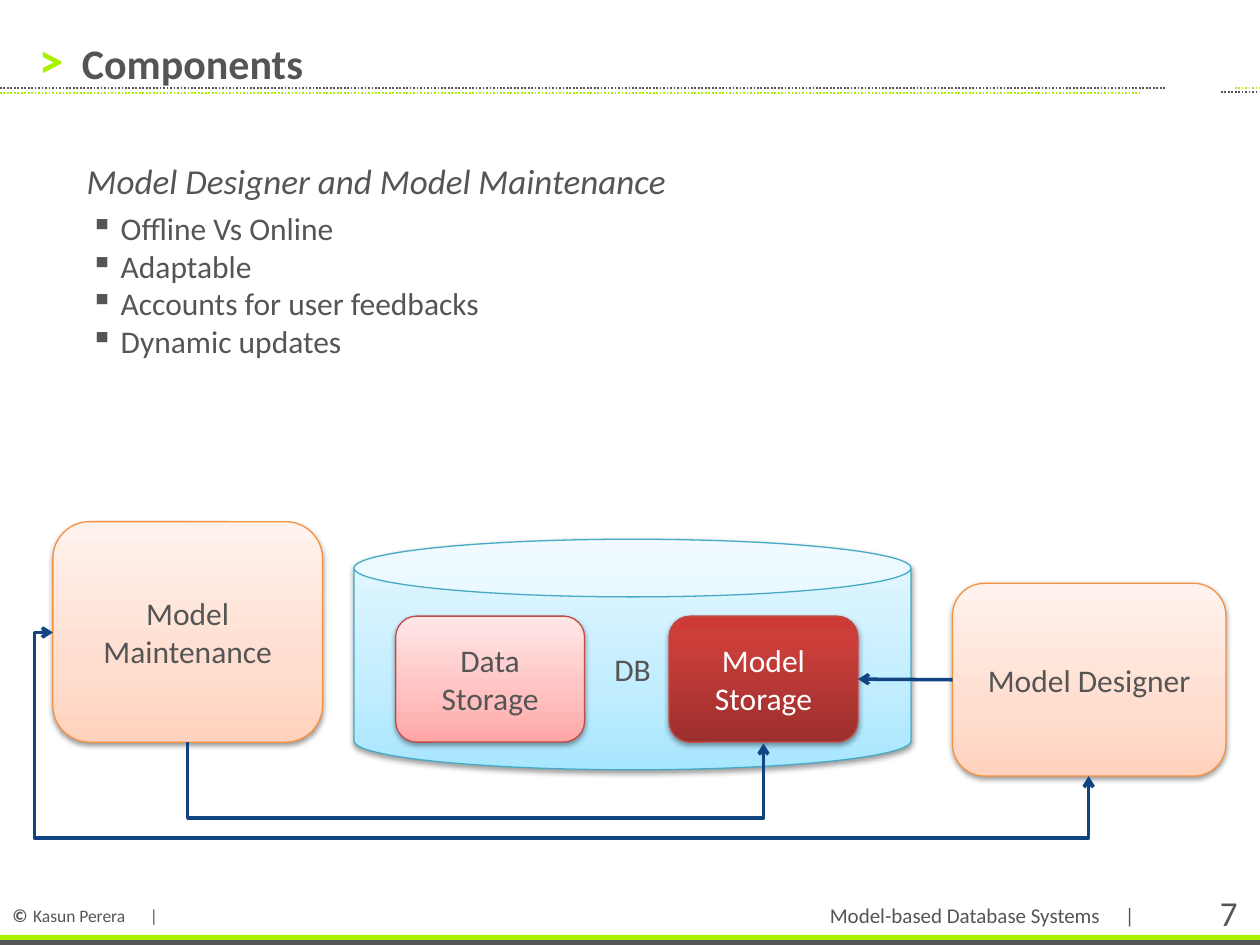
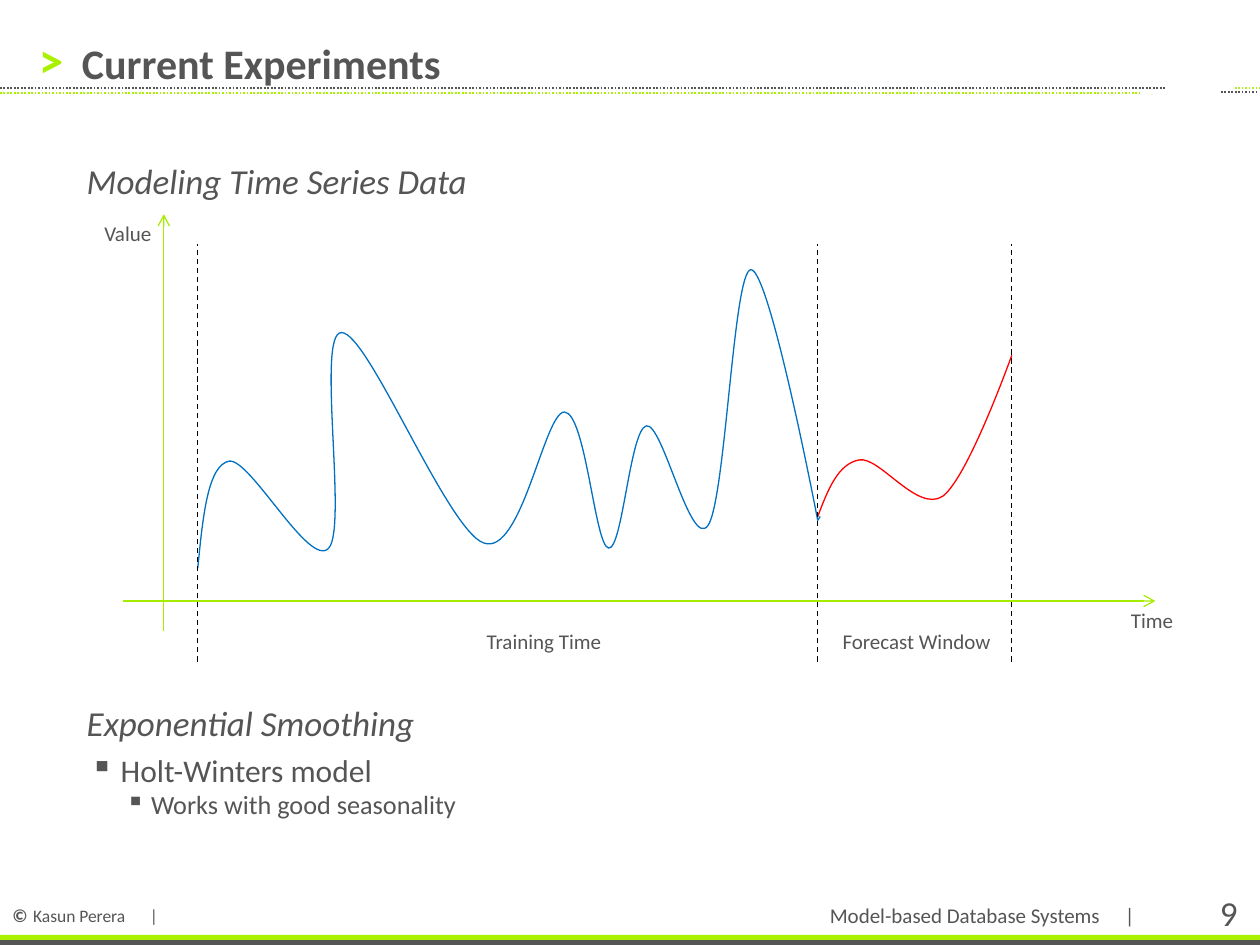
import pptx
import pptx.util
from lxml import etree
from pptx.dml.color import RGBColor
from pptx.enum.dml import MSO_LINE
from pptx.enum.shapes import MSO_CONNECTOR, MSO_SHAPE
from pptx.enum.text import MSO_ANCHOR, MSO_AUTO_SIZE, PP_ALIGN
from pptx.oxml.ns import qn
from pptx.util import Inches, Pt

FONT = "Calibri"
GREY = RGBColor(0x55, 0x55, 0x55)
GREEN = RGBColor(0xAA, 0xF1, 0x00)
PALE_GREEN = RGBColor(0xB2, 0xE9, 0x28)
AXIS_GREEN = RGBColor(0xA6, 0xEC, 0x00)
NAVY = RGBColor(0x11, 0x44, 0x81)
BLUE = RGBColor(0x00, 0x70, 0xC0)
RED = RGBColor(0xFF, 0x00, 0x00)
BLACK = RGBColor(0x00, 0x00, 0x00)
WHITE = RGBColor(0xFF, 0xFF, 0xFF)
ORANGE_EDGE = RGBColor(0xF6, 0x92, 0x40)
CYAN_EDGE = RGBColor(0x46, 0xAA, 0xC5)
RED_EDGE = RGBColor(0xBF, 0x4C, 0x48)

# Gradient stops: position in percent, colour
ORANGE_FILL = [(0, "FFD2BD"), (35, "FFDED0"), (100, "FFF2ED")]
CYAN_FILL = [(0, "A7E6FF"), (35, "C1EDFF"), (100, "E7F8FF")]
PINK_FILL = [(0, "FFA6A5"), (35, "FFC0BF"), (100, "FFE7E7")]
RED_FILL = [(0, "9C2F2D"), (80, "CB3E3A"), (100, "CE3B37")]


def add_text(slide, at, text, size, align=PP_ALIGN.LEFT, wrap=True):
    box = slide.shapes.add_textbox(*map(Inches, at))
    box.text_frame.word_wrap = wrap
    para = box.text_frame.paragraphs[0]
    para.text = text
    para.alignment = align
    for span in para.runs:
        span.font.name = FONT
        span.font.size = Pt(size)
        span.font.color.rgb = GREY
    return box


def add_line(slide, start, end, color, width, dash=None, arrows=(),
             kind=MSO_CONNECTOR.STRAIGHT):
    """Draw a connector; arrows names the ends with a head: headEnd, tailEnd."""
    line = slide.shapes.add_connector(kind, *map(Inches, start + end))
    line.line.color.rgb = color
    line.line.width = Pt(width)
    if dash:
        line.line.dash_style = dash
    outline = line.element.spPr.find(qn("a:ln"))
    for arrow in arrows:
        etree.SubElement(outline, qn("a:" + arrow), type="arrow")
    etree.SubElement(line.element.spPr, qn("a:effectLst"))
    return line


deck = pptx.Presentation()
deck.slide_width = Inches(10)
deck.slide_height = Inches(7.5)

# Each outline: top, height, then (level, text) lines
pages = [
    ("Components", "7", [
        (1.22, 5.63, [(0, "Model Designer and Model Maintenance"),
                      (1, "Offline Vs Online"),
                      (1, "Adaptable"),
                      (1, "Accounts for user feedbacks"),
                      (1, "Dynamic updates")]),
    ]),
    ("Current Experiments", "9", [
        (1.22, 0.45, [(0, "Modeling Time Series Data")]),
        (5.52, 1.33, [(0, "Exponential Smoothing"),
                      (1, "Holt-Winters model"),
                      (2, "Works with good seasonality")]),
    ]),
]
# Per outline level: left margin, hanging indent, text size
LEVELS = [(0.28, 0, 20), (0.55, -0.24, 18), (0.79, -0.2, 15)]

# What both slides share: bands, dotted rules, footer, title and outline
slides = []
for title_text, number, outlines in pages:
    slide = deck.slides.add_slide(deck.slide_layouts[5])
    slides.append(slide)

    copyright_box = add_text(slide, (0, 7.08, 2.19, 0.34), "©", 10.5)
    para = copyright_box.text_frame.paragraphs[0]
    tabs = etree.SubElement(para._p.get_or_add_pPr(), qn("a:tabLst"))
    etree.SubElement(tabs, qn("a:tab"), pos=str(Inches(1.09)), algn="l")
    para.runs[0].font.bold = True
    for text, size in [(" ", 14), ("Kasun Perera\t|", 10)]:
        span = para.add_run()
        span.text = text
        span.font.name = FONT
        span.font.size = Pt(size)
        span.font.color.rgb = GREY

    for top, color in [(7.46, GREY), (7.42, GREEN)]:
        band = slide.shapes.add_shape(MSO_SHAPE.RECTANGLE, 0, Inches(top),
                                      deck.slide_width, Inches(0.04))
        band.shadow.inherit = False
        band.fill.solid()
        band.fill.fore_color.rgb = color
        band.line.fill.background()

    for left, right, top, color in [(9.69, 9.99, 0.73, GREY),
                                    (9.8, 10, 0.7, PALE_GREEN),
                                    (0, 9.25, 0.7, GREY),
                                    (0, 9.05, 0.74, GREEN)]:
        add_line(slide, (left, top), (right, top), color, 1, MSO_LINE.ROUND_DOT)

    add_text(slide, (8.83, 7.11, 0.23, 0.31), "|", 12, PP_ALIGN.RIGHT)
    add_text(slide, (9.14, 7.03, 0.78, 0.44), number, 20, PP_ALIGN.RIGHT)
    footer = add_text(slide, (2.97, 7.11, 5.86, 0.3),
                      "Model-based Database Systems", 12, PP_ALIGN.RIGHT)
    footer.text_frame.vertical_anchor = MSO_ANCHOR.MIDDLE

    marker = add_text(slide, (0.31, 0.23, 0.23, 0.47), ">", 28)
    frame = marker.text_frame
    frame.margin_left = frame.margin_right = 0
    frame.margin_top = frame.margin_bottom = 0
    frame.vertical_anchor = MSO_ANCHOR.MIDDLE
    frame.paragraphs[0].runs[0].font.bold = True
    frame.paragraphs[0].runs[0].font.color.rgb = GREEN

    title = slide.shapes.title
    title.left, title.top = Inches(0.55), Inches(0.22)
    title.width, title.height = Inches(5.63), Inches(0.56)
    title.text_frame.text = title_text
    title.text_frame.auto_size = MSO_AUTO_SIZE.NONE
    title.text_frame.vertical_anchor = MSO_ANCHOR.MIDDLE
    para = title.text_frame.paragraphs[0]
    para.alignment = PP_ALIGN.LEFT
    font = para.runs[0].font
    font.name, font.size, font.bold = FONT, Pt(24), True
    font.color.rgb = GREY

    for top, height, lines in outlines:
        box = slide.shapes.add_textbox(Inches(0.31), Inches(top),
                                       Inches(9.38), Inches(height))
        box.text_frame.word_wrap = True
        box.text_frame.text = "\n".join(text for level, text in lines)
        for para, (level, text) in zip(box.text_frame.paragraphs, lines):
            margin, indent, size = LEVELS[level]
            para.level = level
            properties = para._p.get_or_add_pPr()
            properties.set("marL", str(Inches(margin)))
            properties.set("indent", str(Inches(indent)))
            if level:
                tint = etree.SubElement(properties, qn("a:buClr"))
                etree.SubElement(tint, qn("a:srgbClr"), val=str(GREY))
                etree.SubElement(properties, qn("a:buChar"), char="▪")
            else:
                para.space_after = Pt(4)
            font = para.runs[0].font
            font.name, font.size, font.italic = FONT, Pt(size), level == 0
            font.color.rgb = GREY

components, experiments = slides

# Components: the parts around the database
parts = {}
for name, kind, at, stops, edge, color in [
    ("Model Maintenance", MSO_SHAPE.ROUNDED_RECTANGLE,
     (0.42, 4.14, 2.14, 1.75), ORANGE_FILL, ORANGE_EDGE, GREY),
    ("Model Designer", MSO_SHAPE.ROUNDED_RECTANGLE,
     (7.56, 4.63, 2.17, 1.53), ORANGE_FILL, ORANGE_EDGE, GREY),
    ("DB", MSO_SHAPE.CAN,
     (2.81, 4.28, 4.42, 1.83), CYAN_FILL, CYAN_EDGE, GREY),
    ("Data Storage", MSO_SHAPE.ROUNDED_RECTANGLE,
     (3.14, 4.89, 1.5, 1), PINK_FILL, RED_EDGE, GREY),
    ("Model Storage", MSO_SHAPE.ROUNDED_RECTANGLE,
     (5.31, 4.89, 1.5, 1), RED_FILL, RED_EDGE, WHITE),
]:
    part = components.shapes.add_shape(kind, *map(Inches, at))
    parts[name] = part
    part.fill.gradient()
    part.fill.gradient_angle = 90
    stop_list = part.element.spPr.find(".//" + qn("a:gsLst"))
    for stop in list(stop_list):
        stop_list.remove(stop)
    for position, value in stops:
        stop = etree.SubElement(stop_list, qn("a:gs"), pos=str(position * 1000))
        etree.SubElement(stop, qn("a:srgbClr"), val=value)
    part.line.color.rgb = edge
    part.line.width = Pt(0.75)

    part.shadow.inherit = False
    effects = part.element.spPr.find(qn("a:effectLst"))
    shadow = etree.SubElement(effects, qn("a:outerShdw"), blurRad=str(Pt(3.1)),
                              dist=str(Pt(1.6)), dir="5400000", rotWithShape="0")
    shade = etree.SubElement(shadow, qn("a:srgbClr"), val="000000")
    etree.SubElement(shade, qn("a:alpha"), val="38000")

    part.text_frame.text = name
    part.text_frame.vertical_anchor = MSO_ANCHOR.MIDDLE
    para = part.text_frame.paragraphs[0]
    para.alignment = PP_ALIGN.CENTER
    font = para.runs[0].font
    font.name, font.size = FONT, Pt(18)
    font.color.rgb = color

maintenance = parts["Model Maintenance"]
designer = parts["Model Designer"]
storage = parts["Model Storage"]

design_arrow = add_line(components, (7.56, 5.39), (6.81, 5.39), NAVY, 2,
                        arrows=["tailEnd"])
design_arrow.begin_connect(designer, 1)
design_arrow.end_connect(storage, 3)

# Elbows: joined sides, arrowheads, preset, frame, turn, bends in 1/100000
for source, side, target, arrows, preset, at, turn, bends in [
    (maintenance, 2, storage, ["tailEnd"], "bentConnector3",
     (3.77, 3.61, 0.01, 4.57), {"rot": "16200000", "flipH": "1"}, [6100000]),
    (maintenance, 1, designer, ["headEnd", "tailEnd"], "bentConnector4",
     (0.42, 5.02, 8.22, 1.14), {}, [-1800, 142900]),
]:
    elbow = add_line(components, (0, 0), (1, 1), NAVY, 2, arrows=arrows,
                     kind=MSO_CONNECTOR.ELBOW)
    elbow.begin_connect(source, side)
    elbow.end_connect(target, 2)
    elbow.left, elbow.top, elbow.width, elbow.height = map(Inches, at)
    transform = elbow.element.spPr.find(qn("a:xfrm"))
    for key in ("flipH", "flipV"):
        transform.attrib.pop(key, None)
    for key, value in turn.items():
        transform.set(key, value)
    geometry = elbow.element.spPr.find(qn("a:prstGeom"))
    geometry.set("prst", preset)
    guides = geometry.find(qn("a:avLst"))
    for index, bend in enumerate(bends, 1):
        etree.SubElement(guides, qn("a:gd"), name=f"adj{index}", fmla=f"val {bend}")

# Current Experiments: time series with its forecast
for start, end in [((1.3, 5.01), (1.3, 1.7)), ((0.98, 4.77), (9.17, 4.77))]:
    add_line(experiments, start, end, AXIS_GREEN, 0.75, arrows=["tailEnd"])

# Each curve: start, then two control points and an end per segment
training = [
    (1.57, 4.51),
    (1.61, 4.1), (1.65, 3.69), (1.82, 3.66),
    (1.99, 3.64), (2.46, 4.52), (2.61, 4.35),
    (2.76, 4.18), (2.51, 2.64), (2.71, 2.64),
    (2.92, 2.63), (3.55, 4.21), (3.84, 4.31),
    (4.14, 4.42), (4.32, 3.27), (4.48, 3.27),
    (4.65, 3.28), (4.72, 4.33), (4.83, 4.35),
    (4.94, 4.37), (5, 3.41), (5.13, 3.38),
    (5.26, 3.35), (5.48, 4.37), (5.62, 4.17),
    (5.76, 3.96), (5.82, 2.15), (5.96, 2.14),
    (6.11, 2.14), (6.49, 4.13), (6.49, 4.13),
    (6.49, 4.13), (6.51, 4.1), (6.51, 4.1),
]
forecast = [
    (6.49, 4.1),
    (6.57, 3.89), (6.65, 3.68), (6.82, 3.65),
    (6.98, 3.62), (7.28, 4.07), (7.48, 3.94),
    (7.68, 3.8), (8.03, 2.82), (8.03, 2.82),
]
for points, color in [(training, BLUE), (forecast, RED)]:
    points = [(Inches(x), Inches(y)) for x, y in points]
    anchors = points[::3]
    builder = experiments.shapes.build_freeform(*anchors[0])
    builder.add_line_segments(anchors[1:], close=False)
    curve = builder.convert_to_shape()
    curve.shadow.inherit = False
    curve.fill.background()
    curve.line.color.rgb = color
    curve.line.width = Pt(0.75)
    # Turn every straight segment into a Bézier segment
    segments = list(curve.element.iter(qn("a:lnTo")))
    for index, segment in enumerate(segments):
        bezier = etree.Element(qn("a:cubicBezTo"))
        for x, y in points[3 * index + 1:3 * index + 4]:
            etree.SubElement(bezier, qn("a:pt"), x=str(x - curve.left),
                             y=str(y - curve.top))
        segment.getparent().replace(segment, bezier)

for x in (1.57, 6.49, 8.03):
    add_line(experiments, (x, 5.25), (x, 1.94), BLACK, 0.75, MSO_LINE.DASH)

for left, top, width, text in [(8.87, 4.77, 0.54, "Time"),
                               (0.72, 1.7, 0.58, "Value"),
                               (3.75, 4.94, 1.12, "Training Time"),
                               (6.57, 4.94, 1.39, "Forecast Window")]:
    add_text(experiments, (left, top, width, 0.3), text, 12,
             PP_ALIGN.RIGHT, wrap=False)

deck.save("out.pptx")
